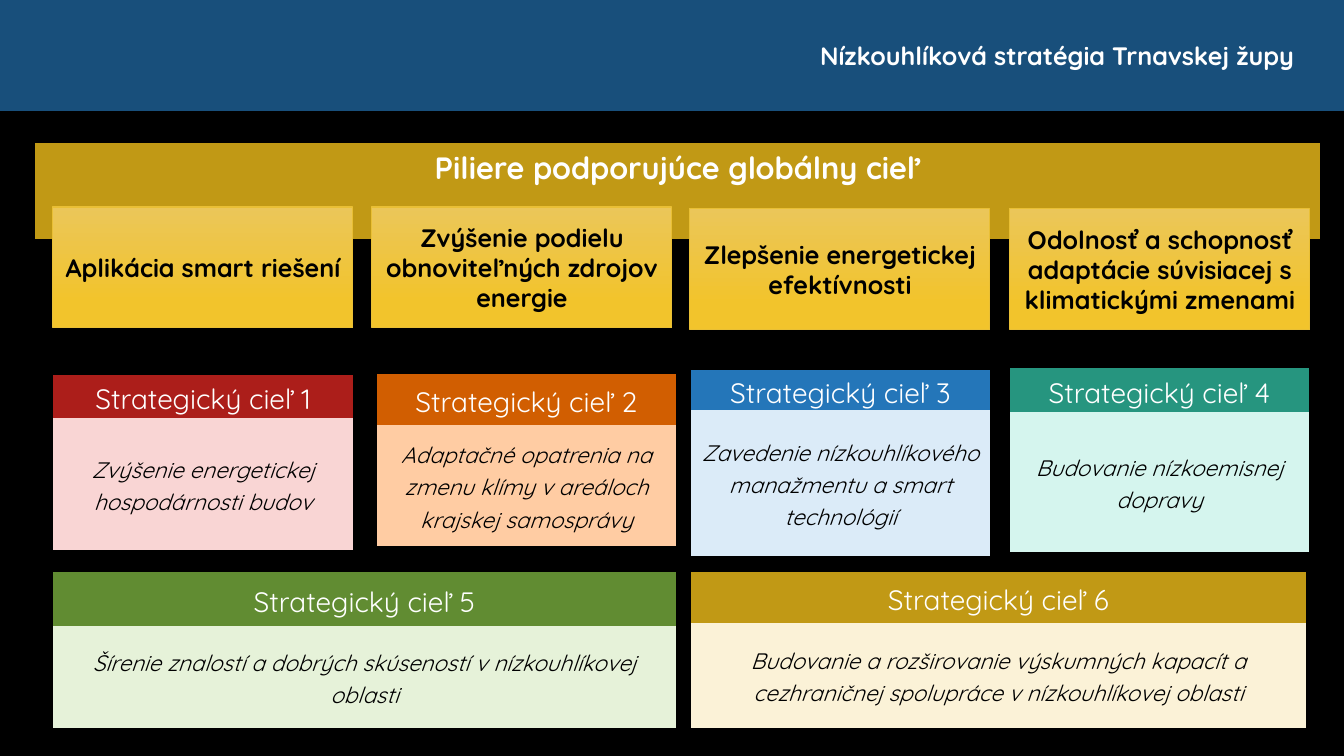
from dataclasses import dataclass

from pptx import Presentation
from pptx.dml.color import RGBColor
from pptx.enum.shapes import MSO_SHAPE
from pptx.enum.text import MSO_ANCHOR, MSO_AUTO_SIZE, PP_ALIGN
from pptx.util import Pt

RECTANGLE = MSO_SHAPE.RECTANGLE
TOP, MIDDLE = MSO_ANCHOR.TOP, MSO_ANCHOR.MIDDLE
NO_AUTOFIT = MSO_AUTO_SIZE.NONE
CENTER, RIGHT = PP_ALIGN.CENTER, PP_ALIGN.RIGHT

EMU_PER_PX = 914400 / 100.8
PLAIN_TABLE_STYLE = "{2D5ABB26-0587-4C30-8999-92F81FD0307C}"


@dataclass(frozen=True)
class Theme:
    font: str = "Quicksand"
    black: str = "000000"
    white: str = "FFFFFF"
    header: str = "184F7B"
    banner: str = "C19915"
    pillar_top: str = "EBC659"
    pillar_bottom: str = "F2C42C"
    pillar_line: str = "E9BF35"
    header_size: int = 18
    banner_size: int = 22
    pillar_size: int = 18
    goal_size: int = 20
    detail_size: int = 16


THEME = Theme()

PILLARS = [
    (53, 207, "Aplikácia smart riešení"),
    (372, 207, "Zvýšenie podielu obnoviteľných zdrojov energie"),
    (690, 209, "Zlepšenie energetickej efektívnosti"),
    (1010, 209, "Odolnosť a schopnosť adaptácie súvisiacej s klimatickými zmenami"),
]

GOALS = [
    ((53, 375, 300), (43, 132), ("AC1E1A", "F9D5D4"),
     "Zvýšenie energetickej hospodárnosti budov"),
    ((377, 374, 299), (51, 121), ("D15E01", "FFCCA3"),
     "Adaptačné opatrenia na zmenu klímy v areáloch krajskej samosprávy"),
    ((691, 370, 299), (40, 146), ("2476B9", "DBEBF8"),
     "Zavedenie nízkouhlíkového manažmentu a smart technológií"),
    ((1010, 368, 299), (44, 140), ("26957F", "D5F5EE"),
     "Budovanie nízkoemisnej dopravy"),
    ((53, 572, 623), (54, 102), ("618C32", "E6F2D9"),
     "Šírenie znalostí a dobrých skúseností v nízkouhlíkovej oblasti"),
    ((691, 572, 615), (51, 105), ("C19915", "FBF2D7"),
     "Budovanie a rozširovanie výskumných kapacít "
     "a cezhraničnej spolupráce v nízkouhlíkovej oblasti"),
]


def px(length):
    return round(length * EMU_PER_PX)


def fill_solid(target, color):
    target.fill.solid()
    target.fill.fore_color.rgb = RGBColor.from_string(color)


def write_text(frame, text, size, color, align=CENTER, bold=False, italic=False, spacing=1.0):
    paragraph = frame.paragraphs[0]
    paragraph.text = text
    paragraph.alignment = align
    paragraph.line_spacing = spacing
    font = paragraph.font
    font.name, font.size = THEME.font, Pt(size)
    font.bold, font.italic = bold, italic
    font.color.rgb = RGBColor.from_string(color)


def add_header(page, text):
    title = page.shapes.title
    title.left, title.top, title.width, title.height = 0, 0, px(1344), px(111)
    fill_solid(title, THEME.header)
    frame = title.text_frame
    frame.auto_size = NO_AUTOFIT
    frame.vertical_anchor = MIDDLE
    frame.margin_right = px(50)
    write_text(frame, text, THEME.header_size, THEME.white, RIGHT, bold=True)


def add_plain_table(page, left, top, width, heights):
    frame = page.shapes.add_table(
        len(heights), 1, px(left), px(top), px(width), px(sum(heights)))
    frame._element.xpath(".//a:tableStyleId")[0].text = PLAIN_TABLE_STYLE
    table = frame.table
    table.first_row = table.horz_banding = False
    for row, height in zip(table.rows, heights):
        row.height = px(height)
    return table


def format_cell(cell, text, fill, size, color, anchor=MIDDLE, bold=False, italic=False):
    fill_solid(cell, fill)
    cell.margin_left = cell.margin_right = px(7)
    cell.margin_top = cell.margin_bottom = 0
    cell.vertical_anchor = anchor
    write_text(cell.text_frame, text, size, color, bold=bold, italic=italic, spacing=1.15)


def add_banner(page, text):
    table = add_plain_table(page, 35, 143, 1285, [96])
    format_cell(table.cell(0, 0), text, THEME.banner, THEME.banner_size,
                THEME.white, anchor=TOP, bold=True)


def add_pillar(page, left, top, text):
    box = page.shapes.add_shape(RECTANGLE, px(left), px(top), px(300), px(121))
    box.shadow.inherit = False
    box.fill.gradient()
    box.fill.gradient_angle = 270
    stops = [(0, THEME.pillar_top), (0.78, THEME.pillar_bottom)]
    for stop, (position, color) in zip(box.fill.gradient_stops, stops):
        stop.position = position
        stop.color.rgb = RGBColor.from_string(color)
    box.line.color.rgb = RGBColor.from_string(THEME.pillar_line)
    box.line.width = Pt(0.75)
    box.text_frame.word_wrap = True
    box.text_frame.vertical_anchor = MIDDLE
    write_text(box.text_frame, text, THEME.pillar_size, THEME.black, bold=True)


def add_goal(page, number, place, heights, colors, detail):
    table = add_plain_table(page, *place, heights)
    heading_fill, detail_fill = colors
    format_cell(table.cell(0, 0), f"Strategický cieľ {number}", heading_fill,
                THEME.goal_size, THEME.white)
    format_cell(table.cell(1, 0), detail, detail_fill,
                THEME.detail_size, THEME.black, italic=True)


def main():
    deck = Presentation()
    deck.slide_width, deck.slide_height = px(1344), px(756)
    page = deck.slides.add_slide(deck.slide_layouts[5])
    fill_solid(page.background, THEME.black)
    add_header(page, "Nízkouhlíková stratégia Trnavskej župy")
    add_banner(page, "Piliere podporujúce globálny cieľ")
    for pillar in PILLARS:
        add_pillar(page, *pillar)
    for number, goal in enumerate(GOALS, start=1):
        add_goal(page, number, *goal)
    deck.save("out.pptx")


if __name__ == "__main__":
    main()
